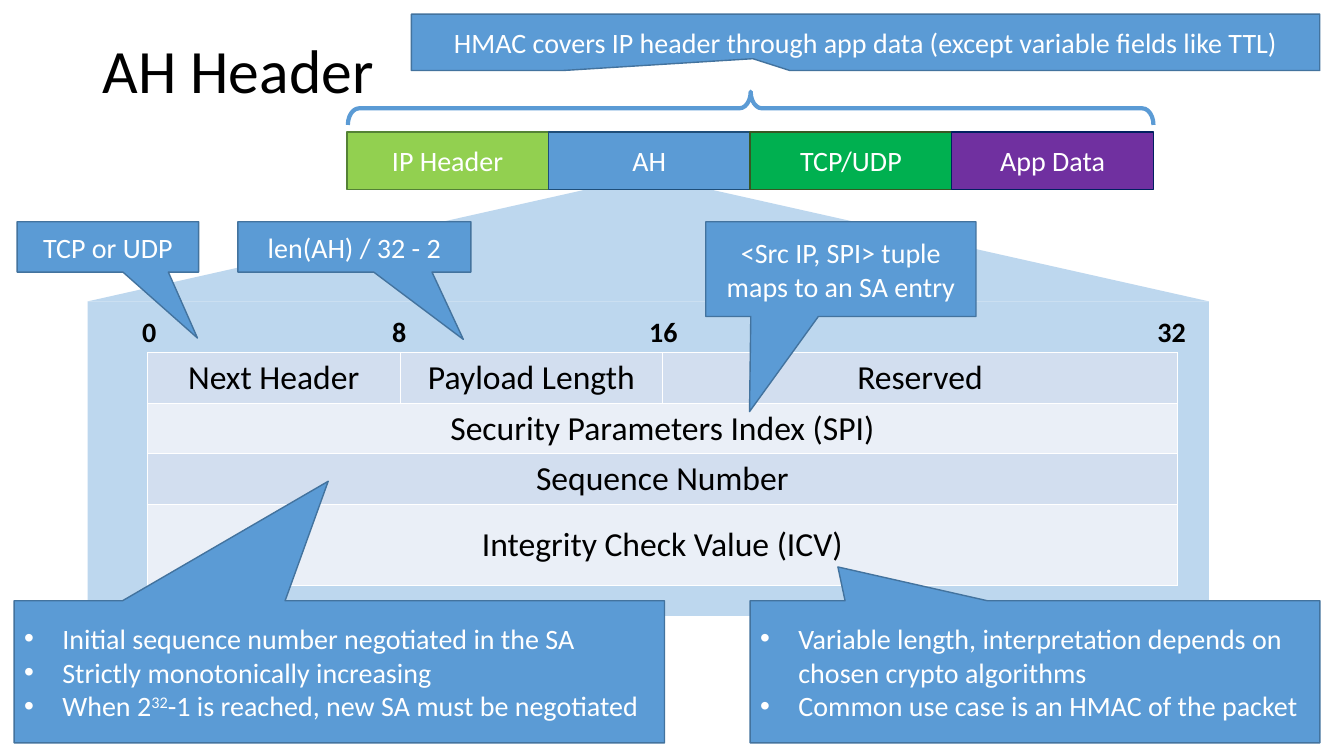
from lxml import etree
from pptx import Presentation
from pptx.dml.color import RGBColor
from pptx.enum import shapes, text
from pptx.oxml import ns
from pptx.util import Inches, Pt

BLACK = RGBColor(0x00, 0x00, 0x00)
WHITE = RGBColor(0xFF, 0xFF, 0xFF)
BLUE = RGBColor(0x5B, 0x9B, 0xD5)
CALLOUT_LINE = RGBColor(0x43, 0x73, 0x9E)
PALE_BLUE = RGBColor(0xBD, 0xD7, 0xEE)
BANDS = [RGBColor(0xD2, 0xDE, 0xEF), RGBColor(0xEA, 0xEF, 0xF7)]
SHAPE = shapes.MSO_SHAPE
ALIGN = text.PP_ALIGN

deck = Presentation()
deck.slide_width, deck.slide_height = Inches(13.33), Inches(7.5)
page = deck.slides.add_slide(deck.slide_layouts[6])


def write(frame, lines, size, color, align=ALIGN.CENTER, bold=False):
    frame.vertical_anchor = text.MSO_ANCHOR.MIDDLE
    for index, line in enumerate(lines):
        para = frame.paragraphs[0] if index == 0 else frame.add_paragraph()
        for part, wording in enumerate(line.split("^")):
            span = para.add_run()
            span.text = wording
            if part == 1:
                span.font._element.set("baseline", "30000")
        para.alignment = align
        para.font.name, para.font.size = "Calibri", Pt(size)
        para.font.bold, para.font.color.rgb = bold, color


def draw(kind, place, fill=None, line=None, width=1, adjust=()):
    shape = page.shapes.add_shape(kind, *map(Inches, place))
    shape.shadow.inherit = False
    for index, value in enumerate(adjust):
        shape.adjustments[index] = value
    if fill is None:
        shape.fill.background()
    else:
        shape.fill.solid()
        shape.fill.fore_color.rgb = fill
    if line is None:
        shape.line.fill.background()
    else:
        shape.line.color.rgb, shape.line.width = line, Pt(width)
    return shape


draw(SHAPE.TRAPEZOID, (0.87, 1.88, 11.12, 1.11), PALE_BLUE, adjust=[4.454])
draw(SHAPE.RECTANGLE, (0.87, 2.99, 11.12, 3.12), PALE_BLUE)

for bit, center in [("0", 1.48), ("8", 3.96), ("16", 6.58), ("32", 11.62)]:
    box = page.shapes.add_textbox(Inches(center - 0.25), Inches(3.07), Inches(0.5), Inches(0.44))
    box.text_frame.word_wrap = False
    write(box.text_frame, [bit], 20, BLACK, bold=True)

title = page.shapes.add_textbox(Inches(0.92), Inches(0), Inches(11.5), Inches(1.45))
title.text_frame.word_wrap = True
write(title.text_frame, ["AH Header"], 44, BLACK, ALIGN.LEFT)
title.text_frame.paragraphs[0].line_spacing = 0.9

header_rows = [
    ["Next Header", "Payload Length", "Reserved"],
    ["Security Parameters Index (SPI)"],
    ["Sequence Number"],
    ["Integrity Check Value (ICV)"],
]
table = page.shapes.add_table(4, 3, Inches(1.46), Inches(3.5), Inches(10.22), Inches(2.31)).table
for column, width in zip(table.columns, [2.51, 2.6, 5.11]):
    column.width = Inches(width)
for row, height in zip(table.rows, [0.5, 0.5, 0.5, 0.81]):
    row.height = Inches(height)
for r, labels in enumerate(header_rows):
    if len(labels) == 1:
        table.cell(r, 0).merge(table.cell(r, 2))
    for c, label in enumerate(labels):
        write(table.cell(r, c).text_frame, [label], 24, BLACK)
    for c in range(3):
        cell = table.cell(r, c)
        cell.vertical_anchor = text.MSO_ANCHOR.MIDDLE
        properties = cell._tc.get_or_add_tcPr()
        for side in ("a:lnL", "a:lnR", "a:lnT", "a:lnB"):
            border = etree.SubElement(properties, ns.qn(side), w=str(Pt(1)))
            solid = etree.SubElement(border, ns.qn("a:solidFill"))
            etree.SubElement(solid, ns.qn("a:srgbClr"), val=str(WHITE))
        cell.fill.solid()
        cell.fill.fore_color.rgb = BANDS[r % 2]

packet = [
    ("IP Header", RGBColor(0x92, 0xD0, 0x50), RGBColor(0x54, 0x82, 0x35)),
    ("AH", BLUE, RGBColor(0x1F, 0x4E, 0x79)),
    ("TCP/UDP", RGBColor(0x00, 0xB0, 0x50), RGBColor(0x38, 0x57, 0x23)),
    ("App Data", RGBColor(0x70, 0x30, 0xA0), RGBColor(0x00, 0x20, 0x60)),
]
for index, (label, fill, line) in enumerate(packet):
    segment = draw(SHAPE.RECTANGLE, (3.44 + 2 * index, 1.31, 2, 0.57), fill, line)
    write(segment.text_frame, [label], 20, WHITE)

brace = draw(SHAPE.LEFT_BRACE, (7.28, -2.92, 0.33, 7.99), None, BLUE, 3, [0.339, 0.5])
brace.rotation = 90

callouts = [
    ((0.17, 2.2, 1.8, 0.5), (0.494, 1.809), ["TCP or UDP"]),
    ((2.36, 2.2, 2.31, 0.5), (0.468, 1.836), ["len(AH) / 32 - 2"]),
    ((0.14, 5.96, 6.45, 1.41), (-0.017, -1.341), [
        "Initial sequence number negotiated in the SA",
        "Strictly monotonically increasing",
        "When 2^32^-1 is reached, new SA must be negotiated"]),
    ((7, 2.2, 2.68, 0.94), (-0.338, 1.504), ["<Src IP, SPI> tuple maps to an SA entry"]),
    ((7.44, 5.96, 5.65, 1.41), (-0.346, -0.738), [
        "Variable length, interpretation depends on chosen crypto algorithms",
        "Common use case is an HMAC of the packet"]),
    ((4.08, 0.14, 9.01, 0.56), (-0.124, 0.291), [
        "HMAC covers IP header through app data (except variable fields like TTL)"]),
]
for place, pointer, lines in callouts:
    callout = draw(SHAPE.RECTANGULAR_CALLOUT, place, BLUE, CALLOUT_LINE, adjust=pointer)
    bulleted = len(lines) > 1
    write(callout.text_frame, lines, 20, WHITE, ALIGN.LEFT if bulleted else ALIGN.CENTER)
    if bulleted:
        for para in callout.text_frame.paragraphs:
            properties = para._p.get_or_add_pPr()
            properties.set("marL", str(Inches(0.38)))
            properties.set("indent", str(Inches(-0.38)))
            font = etree.Element(ns.qn("a:buFont"), typeface="Arial")
            bullet = etree.Element(ns.qn("a:buChar"), char="•")
            properties.insert(0, font)
            properties.insert(1, bullet)

deck.save("out.pptx")
